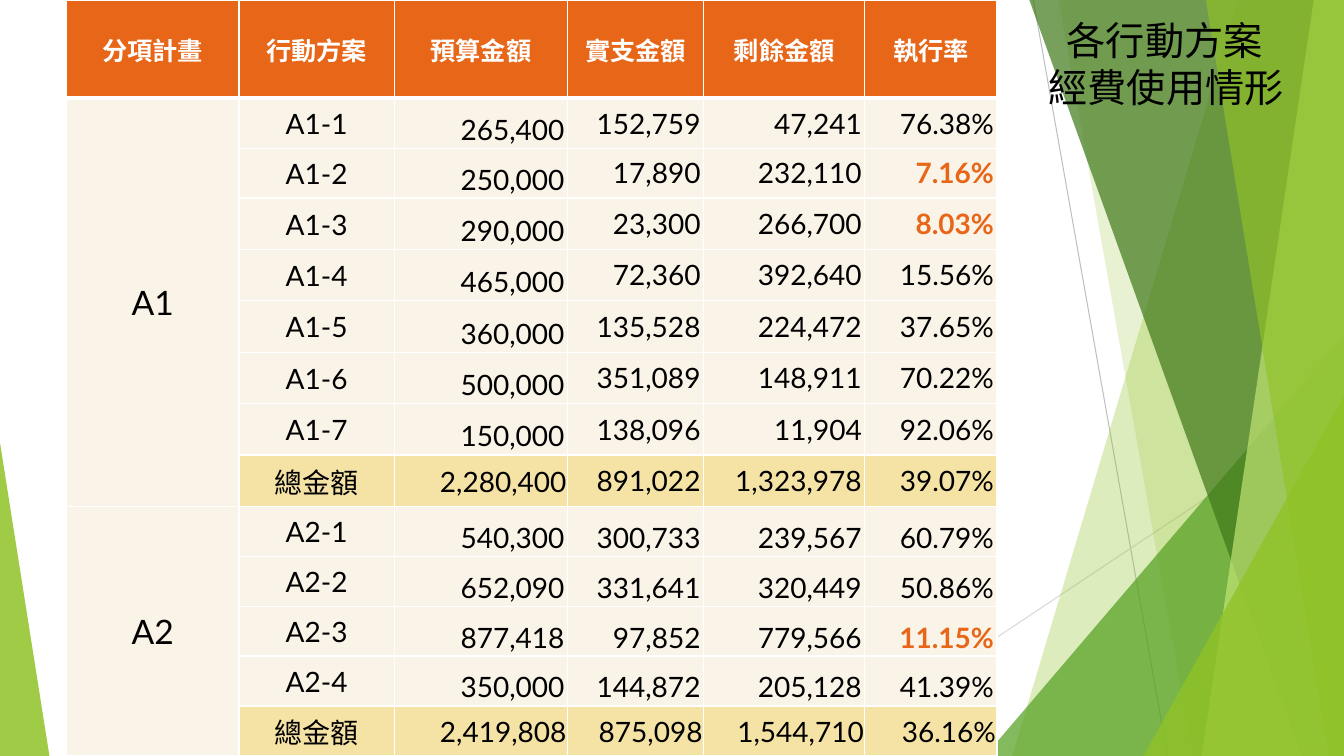
from dataclasses import dataclass

from pptx import Presentation, util as u
from pptx.dml.color import RGBColor
from pptx.enum import shapes, text
from pptx.oxml.ns import qn
from lxml import etree


@dataclass(frozen=True)
class Theme:
    font: str = "Lato"
    ink: str = "000000"
    white: str = "FFFFFF"
    alert: str = "E76618"
    cream: str = "FAF3E8"
    gold: str = "F5E3A5"
    lime: str = "90C226"
    pale: str = "C0E474"
    leaf: str = "54A021"
    moss: str = "3F7819"
    gray: str = "BFBFBF"
    mist: str = "D9D9D9"
    title: int = 28
    group: int = 24
    body: int = 20
    head: int = 18
    tight: tuple = (0.01, 0.01, 0.01, 0)
    loose: tuple = (0.03, 0.02, 0.03, 0.02)


ALIGN = {"l": text.PP_ALIGN.LEFT, "c": text.PP_ALIGN.CENTER, "r": text.PP_ALIGN.RIGHT}
ANCHOR = {"t": text.MSO_ANCHOR.TOP, "m": text.MSO_ANCHOR.MIDDLE,
          "b": text.MSO_ANCHOR.BOTTOM}


def write(frame, words, font, size, color, bold=False, align="l", indent=0):
    """Fill a text frame, one paragraph a line; indent moves the first line."""
    for n, line in enumerate(words.split("\n")):
        para = frame.add_paragraph() if n else frame.paragraphs[0]
        para.alignment = ALIGN[align]
        if indent and n == 0:
            props = para._p.get_or_add_pPr()
            props.set("marL", "0")
            props.set("indent", str(u.Inches(indent)))
        run = para.add_run()
        run.text = line
        run.font.name, run.font.size, run.font.bold = font, u.Pt(size), bold
        run.font.color.rgb = RGBColor.from_string(color)


class Deck:
    """Holds the theme and the slide; lengths are percent of the slide's size."""

    def __init__(self, theme):
        self.theme = theme
        self.prs = Presentation()
        self.prs.slide_width = u.Inches(13.33)
        self.prs.slide_height = u.Inches(7.5)
        self.slide = self.prs.slides.add_slide(self.prs.slide_layouts[5])

    def wide(self, share):
        return round(self.prs.slide_width * share / 100)

    def high(self, share):
        return round(self.prs.slide_height * share / 100)

    def box(self, x, y, w, h):
        return self.wide(x), self.high(y), self.wide(w), self.high(h)

    def paint(self, shape, color, alpha):
        shape.shadow.inherit = False
        shape.line.fill.background()
        shape.fill.solid()
        shape.fill.fore_color.rgb = RGBColor.from_string(color)
        for tint in shape.element.spPr.iter(qn("a:srgbClr")):
            etree.SubElement(tint, qn("a:alpha")).set("val", str(alpha * 1000))

    def line(self, start, end, color):
        link = self.slide.shapes.add_connector(
            shapes.MSO_CONNECTOR.STRAIGHT, self.wide(start[0]), self.high(start[1]),
            self.wide(end[0]), self.high(end[1]))
        link.line.width = u.Pt(0.75)
        link.line.color.rgb = RGBColor.from_string(color)
        etree.SubElement(link.element.spPr, qn("a:effectLst"))

    def shard(self, top, foot, color, alpha):
        """A band from a slanted left edge to the slide's right edge."""
        pen = self.slide.shapes.build_freeform(self.wide(top), 0)
        pen.add_line_segments([(self.wide(x), self.high(y)) for x, y in
                               ((100, 0), (100, 100), (foot, 100))], close=True)
        self.paint(pen.convert_to_shape(), color, alpha)

    def wedge(self, x, y, w, apex, color, alpha):
        """A triangle that stands on the slide's bottom edge."""
        shape = self.slide.shapes.add_shape(
            shapes.MSO_SHAPE.ISOSCELES_TRIANGLE, *self.box(x, y, w, 100 - y))
        shape.adjustments[0] = apex
        self.paint(shape, color, alpha)

    def title(self, words, x, y, w, h, indent):
        look = self.theme
        shape = self.slide.shapes.title
        shape.left, shape.top, shape.width, shape.height = self.box(x, y, w, h)
        frame = shape.text_frame
        frame.word_wrap = True
        frame.auto_size = text.MSO_AUTO_SIZE.NONE
        frame.vertical_anchor = ANCHOR["t"]
        write(frame, words, look.font, look.title, look.ink, indent=indent)
        shape.element.getparent().append(shape.element)  # bring to front

    def table(self, x, y, cols, rows):
        grid = self.slide.shapes.add_table(
            len(rows), len(cols), *self.box(x, y, sum(cols), sum(rows))).table
        grid.horz_banding = False
        for col, share in zip(grid.columns, cols):
            col.width = self.wide(share)
        for row, share in zip(grid.rows, rows):
            row.height = self.high(share)
        return grid

    def cell(self, cell, words, fill, size, color=None, bold=False, align="c",
             anchor="m", inset=None, top=1, base=1):
        look = self.theme
        (cell.margin_left, cell.margin_top, cell.margin_right,
         cell.margin_bottom) = map(u.Inches, inset or look.tight)
        cell.vertical_anchor = ANCHOR[anchor]
        props = cell._tc.get_or_add_tcPr()
        for side, width in zip("LRTB", (1, 1, top, base)):
            edge = etree.SubElement(props, qn(f"a:ln{side}"), w=str(u.Pt(width)))
            solid = etree.SubElement(edge, qn("a:solidFill"))
            etree.SubElement(solid, qn("a:srgbClr"), val=look.white)
        cell.fill.solid()
        cell.fill.fore_color.rgb = RGBColor.from_string(fill)
        if words:
            write(cell.text_frame, words, look.font, size, color or look.ink,
                  bold, align)


HEADS = ("分項計畫", "行動方案", "預算金額", "實支金額", "剩餘金額", "執行率")
TOTAL = "總金額"
LIMIT = 12  # rates below this percentage are marked
PLANS = {
    "A1": (("A1-1", "265,400", "152,759", "47,241", "76.38%"),
           ("A1-2", "250,000", "17,890", "232,110", "7.16%"),
           ("A1-3", "290,000", "23,300", "266,700", "8.03%"),
           ("A1-4", "465,000", "72,360", "392,640", "15.56%"),
           ("A1-5", "360,000", "135,528", "224,472", "37.65%"),
           ("A1-6", "500,000", "351,089", "148,911", "70.22%"),
           ("A1-7", "150,000", "138,096", "11,904", "92.06%"),
           (TOTAL, "2,280,400", "891,022", "1,323,978", "39.07%")),
    "A2": (("A2-1", "540,300", "300,733", "239,567", "60.79%"),
           ("A2-2", "652,090", "331,641", "320,449", "50.86%"),
           ("A2-3", "877,418", "97,852", "779,566", "11.15%"),
           ("A2-4", "350,000", "144,872", "205,128", "41.39%"),
           (TOTAL, "2,419,808", "875,098", "1,544,710", "36.16%")),
}


def backdrop(deck):
    look = deck.theme
    deck.line((76.89, 0), (86.87, 100), look.gray)
    deck.line((100, 53.73), (60.92, 100), look.mist)
    deck.shard(92.12, 75.32, look.lime, 30)
    deck.shard(78.77, 88.75, look.lime, 20)
    deck.wedge(73.29, 44.4, 26.71, 1, look.leaf, 72)
    deck.shard(76.59, 96.85, look.moss, 70)
    deck.shard(97.75, 89.42, look.pale, 70)
    deck.shard(89.72, 98.87, look.lime, 65)
    deck.wedge(85.07, 52.4, 14.93, 1, look.lime, 80)
    deck.wedge(0, 58.53, 3.68, 0, look.lime, 85)


def budget(deck):
    look = deck.theme
    grid = deck.table(4.95, 0, (12.83, 11.55, 12.9, 10.13, 12, 9.83),
                      [13] + [6.6] * 2 + [6.8] * 6 + [6.6] * 5)
    # Header row
    for col, head in enumerate(HEADS):
        deck.cell(grid.cell(0, col), head, look.alert, look.head, look.white,
                  bold=True, base=3)
    # Plan groups
    row = 1
    for plan, lines in PLANS.items():
        first, last = row, row + len(lines) - 1
        for name, *sums in lines:
            top = 3 if row == 1 else 1
            sum_row = name == TOTAL
            fill = look.gold if sum_row else look.cream
            deck.cell(grid.cell(row, 0), plan if row == first else "",
                      look.cream, look.group, top=top)
            deck.cell(grid.cell(row, 1), name, fill, look.body, top=top)
            for col, value in enumerate(sums, 2):
                low = value.endswith("%") and float(value[:-1]) < LIMIT
                lead = col == 2 or plan == "A2"
                deck.cell(grid.cell(row, col), value, fill, look.body,
                          look.alert if low else look.ink, low, "r",
                          "b" if lead and not sum_row else "m",
                          look.tight if lead and sum_row else look.loose, top)
            row += 1
        grid.cell(first, 0).merge(grid.cell(last, 0))


def main():
    deck = Deck(Theme())
    backdrop(deck)
    budget(deck)
    deck.title("各行動方案\n經費使用情形", 77.27, 1.47, 20.48, 13.87, indent=0.18)
    deck.prs.save("out.pptx")


if __name__ == "__main__":
    main()
